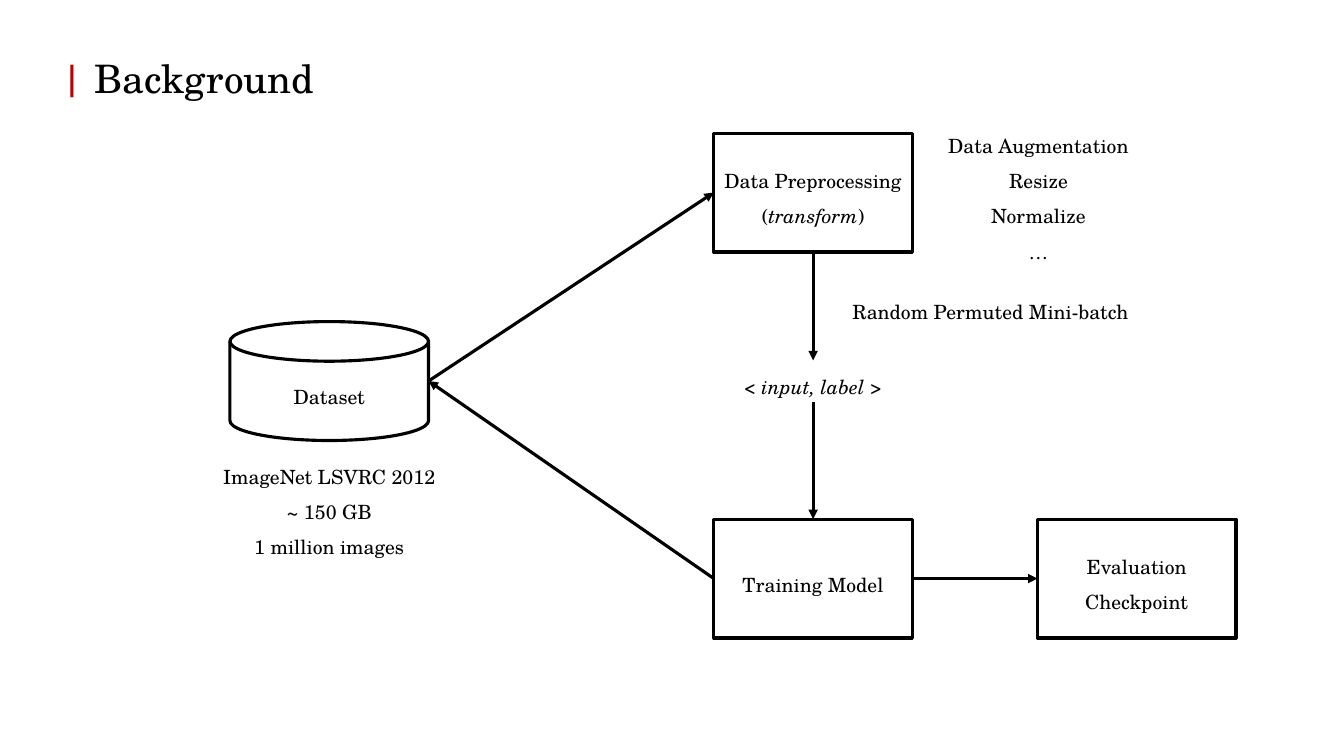
"""Build the Background slide: a flow from dataset to training and evaluation."""
from pptx import Presentation
from pptx.dml.color import RGBColor
from pptx.enum.shapes import MSO_CONNECTOR, MSO_SHAPE
from pptx.enum.text import MSO_ANCHOR, MSO_AUTO_SIZE, PP_ALIGN
from pptx.oxml.ns import qn
from pptx.util import Inches, Pt
from lxml.etree import SubElement

BLACK = RGBColor(0x00, 0x00, 0x00)
WHITE = RGBColor(0xFF, 0xFF, 0xFF)
RED = RGBColor(0xC0, 0x00, 0x00)
FONT = "TeX Gyre Schola"
TOP, LEFT, BOTTOM, RIGHT = range(4)

prs = Presentation()
prs.slide_width, prs.slide_height = Inches(13.33), Inches(7.5)
COL, ROW = prs.slide_width / 100, prs.slide_height / 100
s = prs.slides.add_slide(prs.slide_layouts[6])

DATA_X, MAIN_X, EVAL_X = 24.5, 60.5, 84.58
TOP_Y, MID_Y, LOW_Y = 25.47, 50.4, 76.53
BOX_W, BOX_H = 14.78, 15.73


def frame(cx, cy, w, h):
    """Turn a centre and a size in grid units into left, top, width, height."""
    return [round(v) for v in ((cx - w / 2) * COL, (cy - h / 2) * ROW, w * COL, h * ROW)]


def write(sp, lines, size=14, align=PP_ALIGN.CENTER, spacing=1.5):
    """Fill a shape with lines, each a list of (text, italic, colour) runs."""
    tf = sp.text_frame
    tf.word_wrap = True
    tf.vertical_anchor = MSO_ANCHOR.MIDDLE
    for i, runs in enumerate(lines):
        p = tf.paragraphs[0] if i == 0 else tf.add_paragraph()
        p.alignment, p.line_spacing = align, spacing
        for text, italic, color in runs:
            r = p.add_run()
            r.text = text
            r.font.name, r.font.size = FONT, Pt(size)
            r.font.italic, r.font.color.rgb = italic, color


def_run = lambda text: [(text, False, BLACK)]

title = s.shapes.add_textbox(*frame(19.65, 10.33, 31.84, 7.6))
write(title, [[("|", False, RED), (" Background", False, BLACK)]], 28, PP_ALIGN.LEFT, 1.0)
title.text_frame.auto_size = MSO_AUTO_SIZE.SHAPE_TO_FIT_TEXT

boxes = {}
for name, kind, cx, cy, lines in [
    ("dataset", MSO_SHAPE.FLOWCHART_MAGNETIC_DISK, DATA_X, MID_Y, [def_run("Dataset")]),
    ("preprocessing", MSO_SHAPE.RECTANGLE, MAIN_X, TOP_Y,
     [def_run("Data Preprocessing"),
      [("(", False, BLACK), ("transform", True, BLACK), (")", False, BLACK)]]),
    ("training", MSO_SHAPE.RECTANGLE, MAIN_X, LOW_Y, [def_run("Training Model")]),
    ("evaluation", MSO_SHAPE.RECTANGLE, EVAL_X, LOW_Y,
     [def_run("Evaluation"), def_run("Checkpoint")]),
]:
    sp = s.shapes.add_shape(kind, *frame(cx, cy, BOX_W, BOX_H))
    sp.shadow.inherit = False
    sp.fill.solid()
    sp.fill.fore_color.rgb = WHITE
    sp.line.color.rgb, sp.line.width = BLACK, Pt(2.25)
    write(sp, lines)
    boxes[name] = sp

for name, cx, cy, w, h, lines in [
    ("pair", MAIN_X, MID_Y, 12.83, 5.47,
     [[("< ", False, BLACK), ("input, label", True, BLACK), (" >", False, BLACK)]]),
    ("batch", 73.7, 40.47, 26.48, 5.47, [def_run("Random Permuted Mini-batch")]),
    ("steps", 77.27, TOP_Y, 17.55, 19.6,
     [def_run(t) for t in ("Data Augmentation", "Resize", "Normalize", "…")]),
    ("facts", DATA_X, 66.93, 22.8, 14.93,
     [def_run(t) for t in ("ImageNet LSVRC 2012", "~ 150 GB", "1 million images")]),
]:
    sp = s.shapes.add_textbox(*frame(cx, cy, w, h))
    write(sp, lines)
    sp.text_frame.auto_size = MSO_AUTO_SIZE.SHAPE_TO_FIT_TEXT
    boxes[name] = sp

disk_right = round((DATA_X + BOX_W / 2) * COL), round(MID_Y * ROW)
for start, start_side, end, end_side in [
    ("dataset", RIGHT, "preprocessing", LEFT),
    ("preprocessing", BOTTOM, "pair", TOP),
    ("pair", BOTTOM, "training", TOP),
    ("training", RIGHT, "evaluation", LEFT),
    ("training", LEFT, "dataset", RIGHT),
]:
    arrow = s.shapes.add_connector(MSO_CONNECTOR.STRAIGHT, *disk_right, *disk_right)
    if start != "dataset":
        arrow.begin_connect(boxes[start], start_side)
    if end != "dataset":
        arrow.end_connect(boxes[end], end_side)
    arrow.line.color.rgb, arrow.line.width = BLACK, Pt(2.25)
    SubElement(arrow.line._get_or_add_ln(), qn("a:tailEnd"), type="triangle")
    SubElement(arrow._element.spPr, qn("a:effectLst"))

prs.save("out.pptx")
